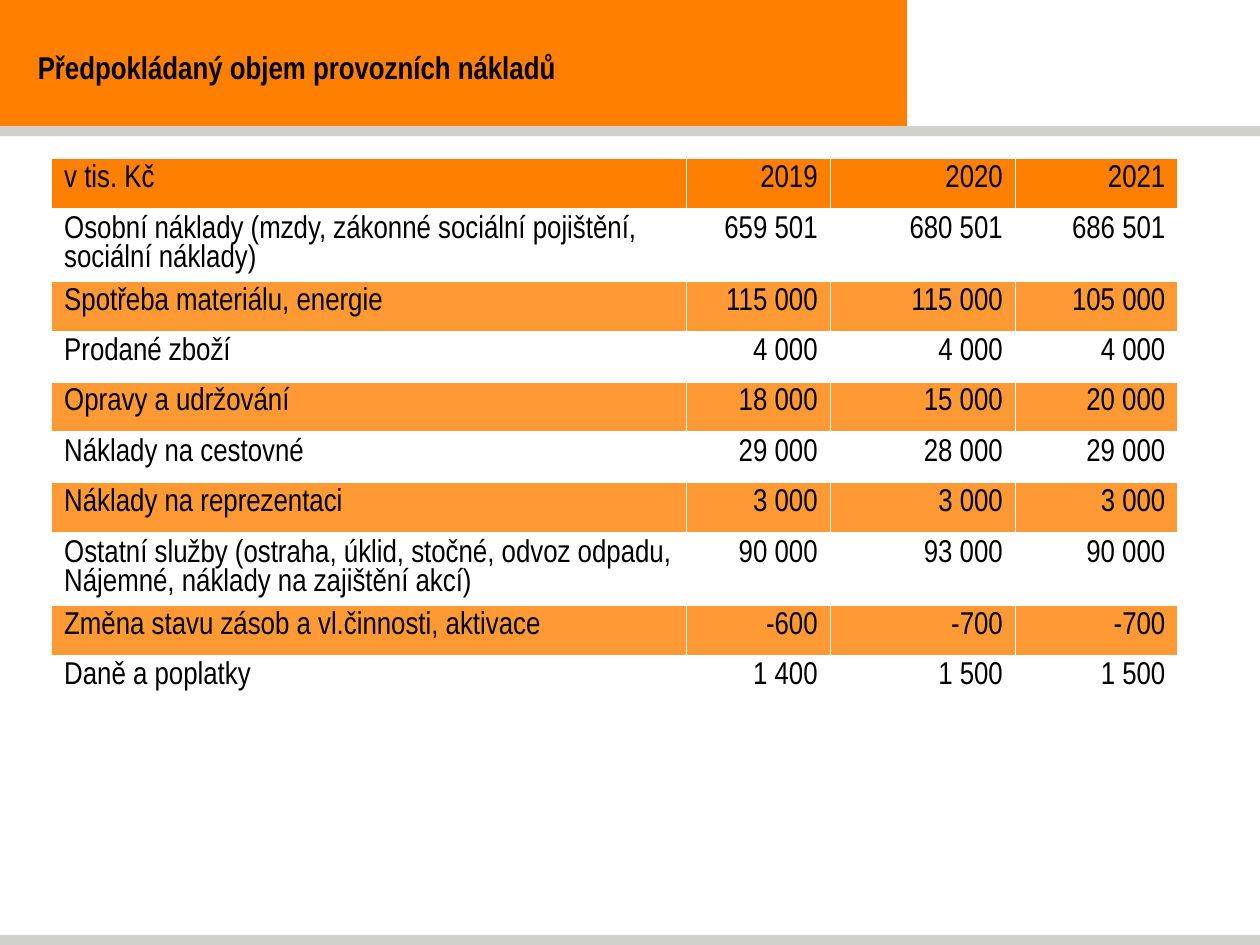
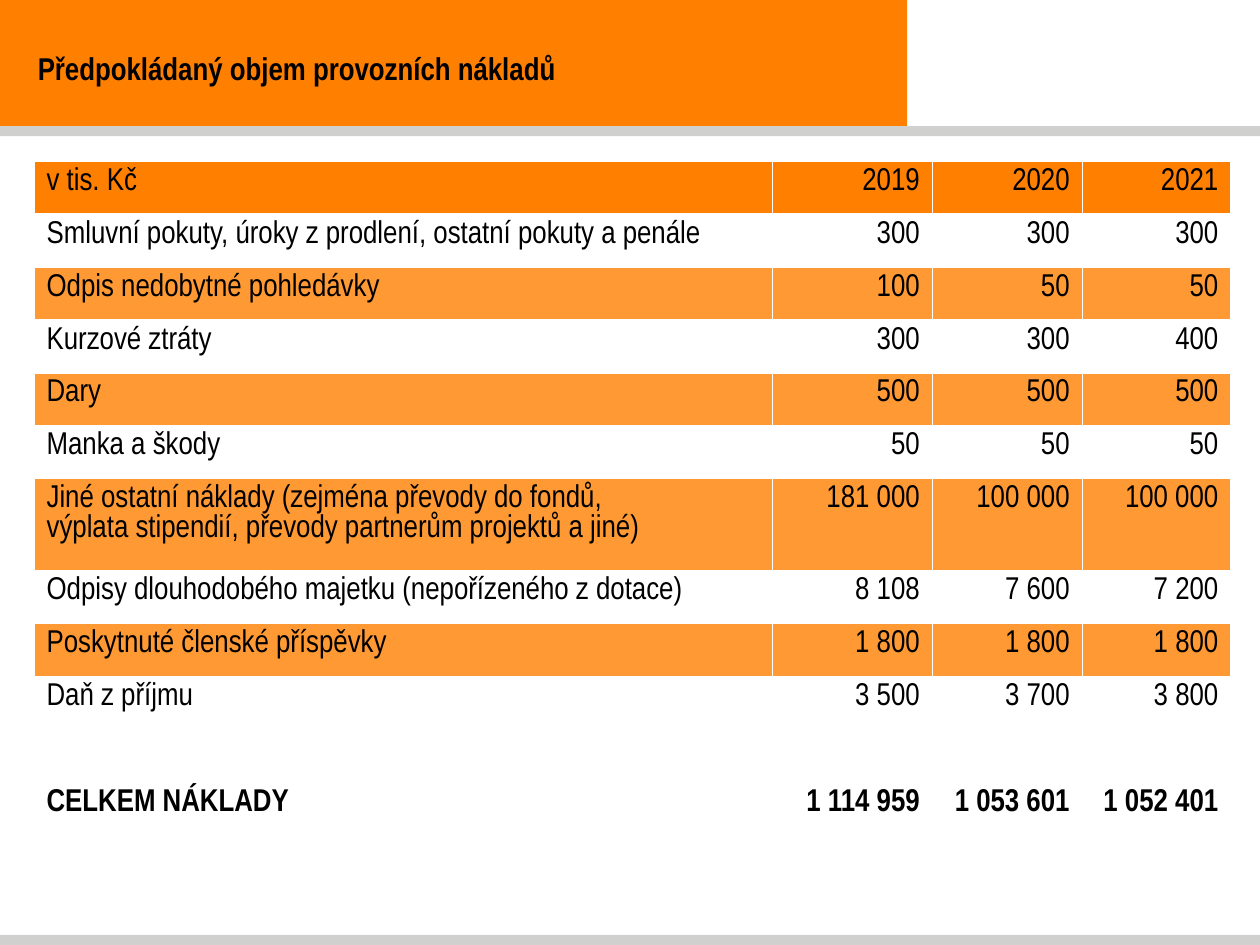
"""Build two slides with tables of expected operating costs."""
from pptx import Presentation
from pptx.dml.color import RGBColor
from pptx.enum.shapes import MSO_SHAPE
from pptx.enum.text import MSO_ANCHOR, PP_ALIGN
from pptx.util import Inches, Pt

ORANGE = RGBColor(0xFF, 0x80, 0x01)
LIGHT_ORANGE = RGBColor(0xFF, 0x99, 0x33)
GREY = RGBColor(0xD0, 0xD0, 0xCE)
WHITE = RGBColor(0xFF, 0xFF, 0xFF)
BLACK = RGBColor(0, 0, 0)
FONT = "Arial Narrow"
FONT_SIZE = Pt(18)

TITLE = "Předpokládaný objem provozních nákladů"
HEADER = ("v tis. Kč", "2019", "2020", "2021")
EMPTY_ROW = ("", "", "", "")
TOTAL_LABEL = "CELKEM NÁKLADY"

BANDS = [
    (0, 0, 7.2, 1, ORANGE),
    (0, 7.42, 10, 0.08, GREY),
    (0, 1, 10, 0.08, GREY),
]

COST_TABLES = [
    {
        "left": 0.41, "top": 1.26,
        "columns": (5.04, 1.14, 1.47, 1.29),
        "row_height": 0.4, "tall_height": 0.57, "title_height": 0.44,
        "rows": [
            HEADER,
            ("Osobní náklady (mzdy, zákonné sociální pojištění,\nsociální náklady)",
             "659 501", "680 501", "686 501"),
            ("Spotřeba materiálu, energie", "115 000", "115 000", "105 000"),
            ("Prodané zboží", "4 000", "4 000", "4 000"),
            ("Opravy a udržování", "18 000", "15 000", "20 000"),
            ("Náklady na cestovné", "29 000", "28 000", "29 000"),
            ("Náklady na reprezentaci", "3 000", "3 000", "3 000"),
            ("Ostatní služby (ostraha, úklid, stočné, odvoz odpadu,\n"
             "Nájemné, náklady na zajištění akcí)",
             "90 000", "93 000", "90 000"),
            ("Změna stavu zásob a vl.činnosti, aktivace", "-600", "-700", "-700"),
            ("Daně a poplatky", "1 400", "1 500", "1 500"),
            EMPTY_ROW,
            EMPTY_ROW,
        ],
    },
    {
        "left": 0.27, "top": 1.28,
        "columns": (5.86, 1.27, 1.19, 1.18),
        "row_height": 0.42, "tall_height": 0.73, "title_height": 0.45,
        "rows": [
            HEADER,
            ("Smluvní pokuty, úroky z prodlení, ostatní pokuty a penále",
             "300", "300", "300"),
            ("Odpis nedobytné pohledávky", "100", "50", "50"),
            ("Kurzové ztráty", "300", "300", "400"),
            ("Dary", "500", "500", "500"),
            ("Manka a škody", "50", "50", "50"),
            ("Jiné ostatní náklady (zejména převody do fondů,\n"
             "výplata stipendií, převody partnerům projektů a jiné)",
             "181 000", "100 000", "100 000"),
            ("Odpisy dlouhodobého majetku (nepořízeného z dotace)",
             "8 108", "7 600", "7 200"),
            ("Poskytnuté členské příspěvky", "1 800", "1 800", "1 800"),
            ("Daň z příjmu", "3 500", "3 700", "3 800"),
            EMPTY_ROW,
            (TOTAL_LABEL, "1 114 959", "1 053 601", "1 052 401"),
        ],
    },
]


def style_font(font, bold):
    font.name = FONT
    font.size = FONT_SIZE
    font.bold = bold
    font.color.rgb = BLACK


def add_bands(page):
    for left, top, width, height, color in BANDS:
        band = page.shapes.add_shape(
            MSO_SHAPE.RECTANGLE, Inches(left), Inches(top), Inches(width), Inches(height))
        band.shadow.inherit = False
        band.fill.solid()
        band.fill.fore_color.rgb = color
        band.line.fill.background()


def add_title(page, height):
    box = page.shapes.add_textbox(Inches(0), Inches(0.31), Inches(7.2), Inches(height))
    frame = box.text_frame
    frame.word_wrap = True
    frame.vertical_anchor = MSO_ANCHOR.MIDDLE
    frame.margin_left = Inches(0.3)
    para = frame.paragraphs[0]
    para.alignment = PP_ALIGN.JUSTIFY
    span = para.add_run()
    span.text = TITLE
    style_font(span.font, True)


def row_color(row_index, values):
    if row_index == 0:
        return ORANGE
    banded = row_index % 2 == 0 and values != EMPTY_ROW
    return LIGHT_ORANGE if banded else WHITE


def fill_cell(cell, text, color, alignment, bold):
    cell.fill.solid()
    cell.fill.fore_color.rgb = color
    frame = cell.text_frame
    for line_index, line in enumerate(text.split("\n")):
        para = frame.add_paragraph() if line_index else frame.paragraphs[0]
        para.alignment = alignment
        if line:
            span = para.add_run()
            span.text = line
            style_font(span.font, bold)


def add_cost_table(page, costs):
    rows, columns = costs["rows"], costs["columns"]
    heights = [costs["tall_height"] if "\n" in values[0] else costs["row_height"]
               for values in rows]
    table = page.shapes.add_table(
        len(rows), len(columns), Inches(costs["left"]), Inches(costs["top"]),
        Inches(sum(columns)), Inches(sum(heights))).table
    for column, width in zip(table.columns, columns):
        column.width = Inches(width)
    for row_index, values in enumerate(rows):
        table.rows[row_index].height = Inches(heights[row_index])
        color = row_color(row_index, values)
        bold = values[0] == TOTAL_LABEL
        for column_index, text in enumerate(values):
            alignment = PP_ALIGN.RIGHT if column_index else PP_ALIGN.LEFT
            fill_cell(table.cell(row_index, column_index), text, color, alignment, bold)


def main():
    deck = Presentation()
    deck.slide_width, deck.slide_height = Inches(10), Inches(7.5)
    for costs in COST_TABLES:
        page = deck.slides.add_slide(deck.slide_layouts[6])
        add_bands(page)
        add_cost_table(page, costs)
        add_title(page, costs["title_height"])
    deck.save("out.pptx")


if __name__ == "__main__":
    main()
